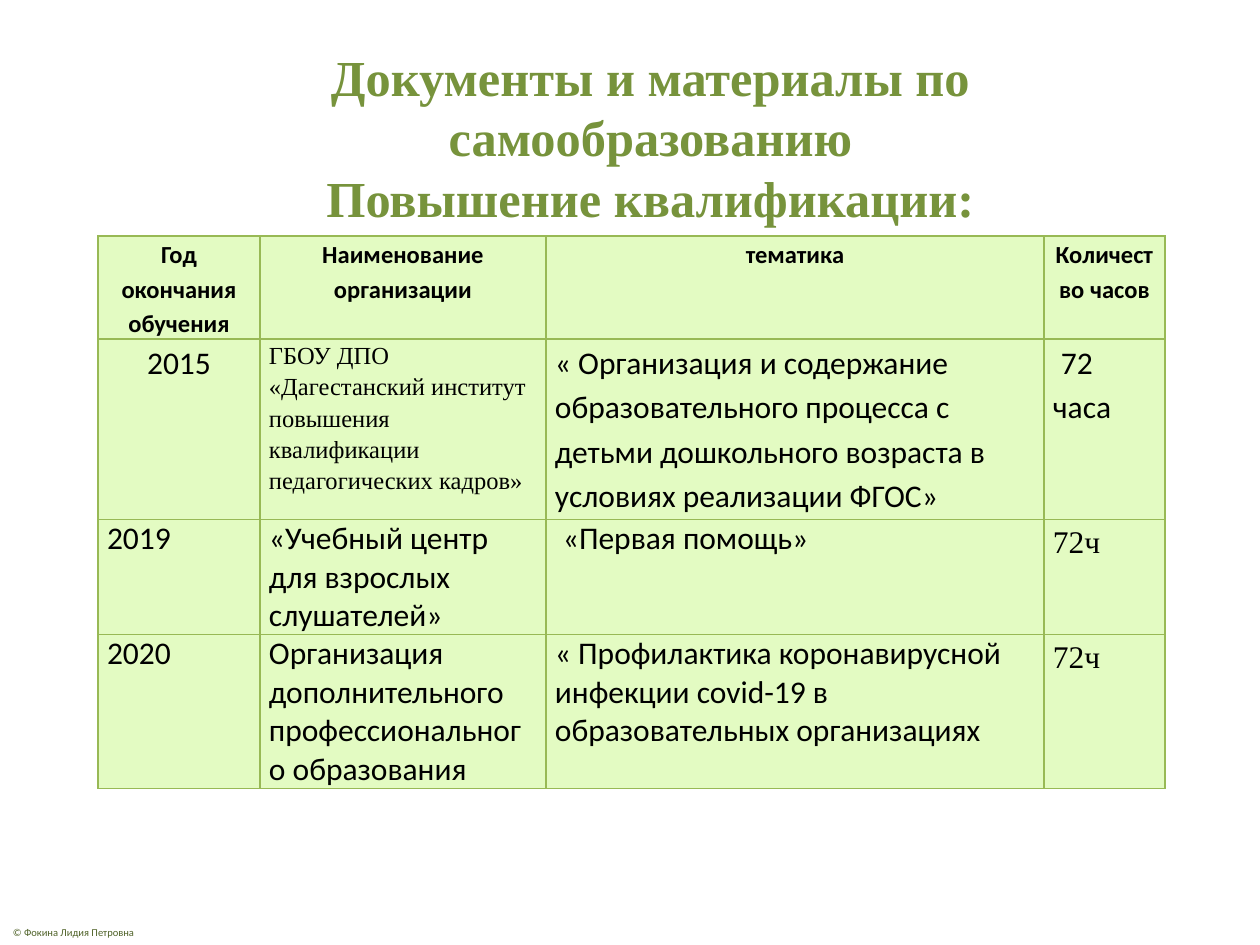
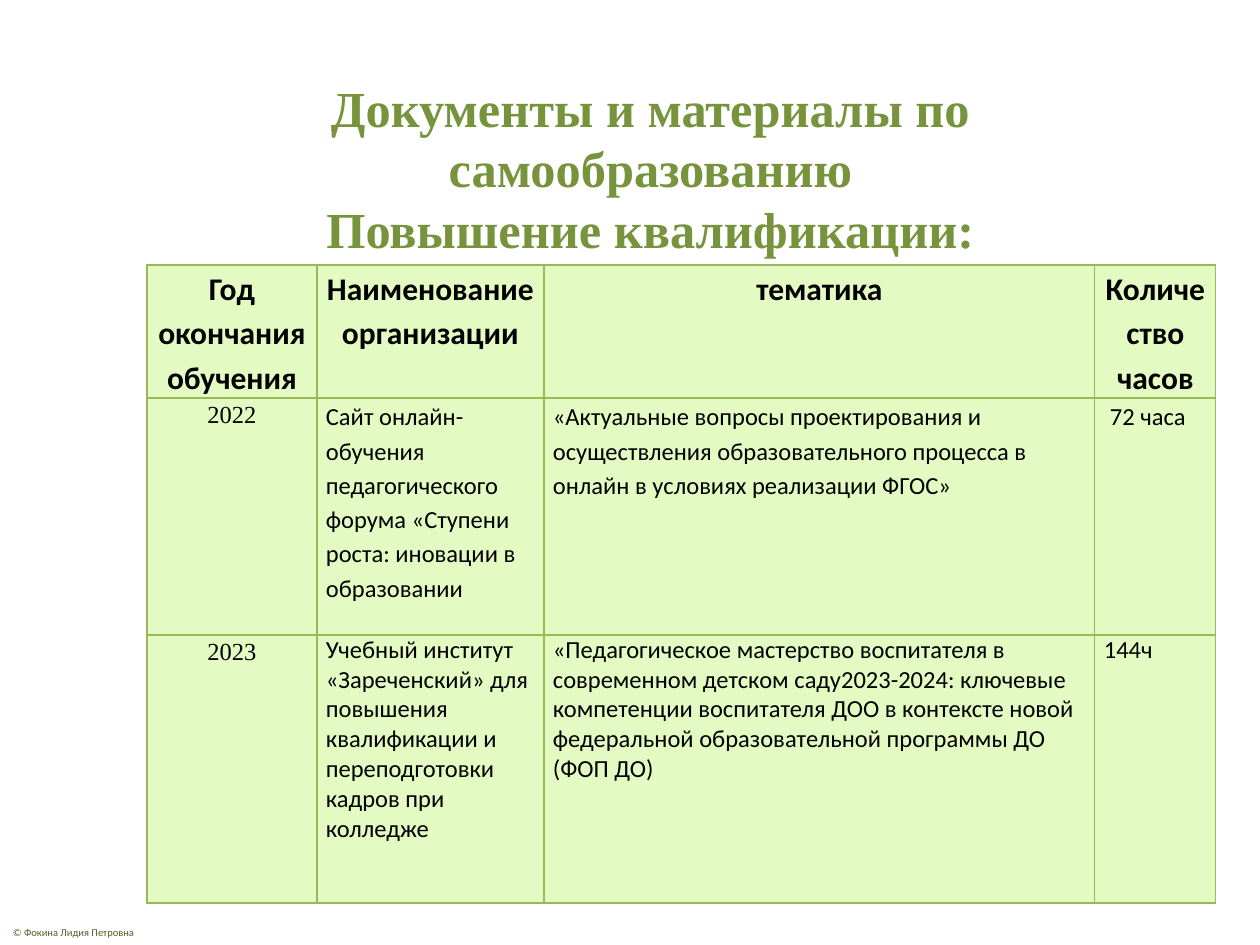
import dataclasses

import lxml.etree
import pptx
import pptx.dml.color
import pptx.enum.text
import pptx.oxml.ns
import pptx.util

# Shared look
GREEN = pptx.dml.color.RGBColor(0x77, 0x93, 0x3C)
DARK_GREEN = pptx.dml.color.RGBColor(0x4F, 0x62, 0x28)
PALE_GREEN = pptx.dml.color.RGBColor(0xE3, 0xFB, 0xC2)
BORDER = pptx.dml.color.RGBColor(0x98, 0xB9, 0x55)
BLACK = pptx.dml.color.RGBColor(0, 0, 0)
SANS, SERIF = "Calibri", "Times New Roman"
LEFT = pptx.enum.text.PP_ALIGN.LEFT
CENTER = pptx.enum.text.PP_ALIGN.CENTER
MIDDLE = pptx.enum.text.MSO_ANCHOR.MIDDLE

TITLE = "Документы и материалы по самообразованию\vПовышение квалификации:"
FOOTER = "© Фокина Лидия Петровна"
HEADINGS = ["Год окончания обучения", "Наименование организации", "тематика", "Количество часов"]


@dataclasses.dataclass
class Style:
    size: float
    font: str = SANS
    color: pptx.dml.color.RGBColor = BLACK
    bold: bool = False
    align: object = LEFT
    spacing: float = 1.0
    after: int = 0
    indent: int = 0


def px(n):
    return pptx.util.Emu(round(n * 914400 / 126))


def style_paragraph(p, style):
    p.alignment = style.align
    p.line_spacing = style.spacing
    p.space_after = pptx.util.Pt(style.after)
    if style.indent:
        p._p.get_or_add_pPr().set("indent", str(px(style.indent)))
    for r in p.runs:
        r.font.size = pptx.util.Pt(style.size)
        r.font.name = style.font
        r.font.bold = style.bold
        r.font.color.rgb = style.color


def add_text(s, box, text, style, side_insets):
    tf = s.shapes.add_textbox(*map(px, box)).text_frame
    tf.word_wrap = True
    tf.vertical_anchor = MIDDLE
    tf.margin_left, tf.margin_right = map(px, side_insets)
    tf.text = text
    style_paragraph(tf.paragraphs[0], style)


def add_borders(cell):
    tcPr = cell._tc.get_or_add_tcPr()
    qn = pptx.oxml.ns.qn
    for side in ("a:lnL", "a:lnR", "a:lnT", "a:lnB"):
        line = lxml.etree.SubElement(tcPr, qn(side), w=str(pptx.util.Pt(0.75)))
        fill = lxml.etree.SubElement(line, qn("a:solidFill"))
        lxml.etree.SubElement(fill, qn("a:srgbClr"), val=str(BORDER))


def fill_cell(cell, text, style):
    cell.margin_left = cell.margin_right = px(9)
    cell.margin_top = cell.margin_bottom = 0
    add_borders(cell)
    cell.fill.solid()
    cell.fill.fore_color.rgb = PALE_GREEN
    cell.text = text
    style_paragraph(cell.text_frame.paragraphs[0], style)


def add_courses_table(s, left, top, widths, heights, heading_size, courses):
    frame = s.shapes.add_table(len(heights), len(widths), px(left), px(top),
                               px(sum(widths)), px(sum(heights)))
    table = frame.table
    table.first_row = table.horz_banding = False
    for column, width in zip(table.columns, widths):
        column.width = px(width)
    for row, height in zip(table.rows, heights):
        row.height = px(height)
    heading = Style(heading_size, bold=True, align=CENTER, spacing=1.15)
    rows = [[(text, heading) for text in HEADINGS]] + courses
    for row, contents in zip(table.rows, rows):
        for cell, (text, style) in zip(row.cells, contents):
            fill_cell(cell, text, style)


def add_base_slide(prs, title_height):
    s = prs.slides.add_slide(prs.slide_layouts[6])
    add_text(s, (0, 920, 150, 25), FOOTER, Style(6, color=DARK_GREEN), (13, 0))
    title = Style(28.8, SERIF, GREEN, bold=True, align=CENTER)
    add_text(s, (115, 66, 1071, title_height), TITLE, title, (25, 25))
    return s


def main():
    prs = pptx.Presentation()
    prs.slide_width, prs.slide_height = px(1260), px(945)

    # Courses of 2015-2020
    plain = Style(18)
    loose = Style(18, spacing=1.15)
    hours = Style(18, SERIF, spacing=1.15, after=10)
    s = add_base_slide(prs, 141)
    add_courses_table(s, 98, 236, (162, 286, 498, 121), (103, 181, 115, 154), 14, [
        [("2015", Style(18, align=CENTER, spacing=1.15)),
         ("ГБОУ ДПО «Дагестанский институт повышения квалификации педагогических кадров»",
          Style(14, SERIF, spacing=1.15)),
         ("« Организация и содержание образовательного процесса с детьми "
          "дошкольного возраста в условиях реализации ФГОС»", loose),
         ("72 часа", Style(18, spacing=1.15, indent=8))],
        [("2019", plain),
         ("«Учебный центр для взрослых слушателей»", plain),
         ("«Первая помощь»", Style(18, indent=8)),
         ("72ч", hours)],
        [("2020", plain),
         ("Организация дополнительного профессионального образования", plain),
         ("« Профилактика коронавирусной инфекции covid-19 в "
          "образовательных организациях", plain),
         ("72ч", hours)],
    ])

    # Courses of 2022-2023
    plain = Style(14)
    loose = Style(14, spacing=1.15)
    s = add_base_slide(prs, 203)
    add_courses_table(s, 147, 265, (170, 227, 551, 121), (133, 237, 268), 18, [
        [("2022", Style(14, SERIF, align=CENTER, spacing=1.15)),
         ("Сайт онлайн-обучения педагогического форума «Ступени роста: "
          "иновации в образовании", loose),
         ("«Актуальные вопросы проектирования и осуществления образовательного "
          "процесса в онлайн в условиях реализации ФГОС»", loose),
         ("72 часа", Style(14, spacing=1.15, indent=6))],
        [("2023", Style(14, SERIF, align=CENTER, spacing=1.15, after=10)),
         ("Учебный институт «Зареченский» для повышения квалификации и "
          "переподготовки кадров при колледже", plain),
         ("«Педагогическое мастерство воспитателя в современном детском "
          "саду2023-2024: ключевые компетенции воспитателя ДОО в контексте "
          "новой федеральной образовательной программы ДО (ФОП ДО)", plain),
         ("144ч", plain)],
    ])

    prs.save("out.pptx")


if __name__ == "__main__":
    main()
